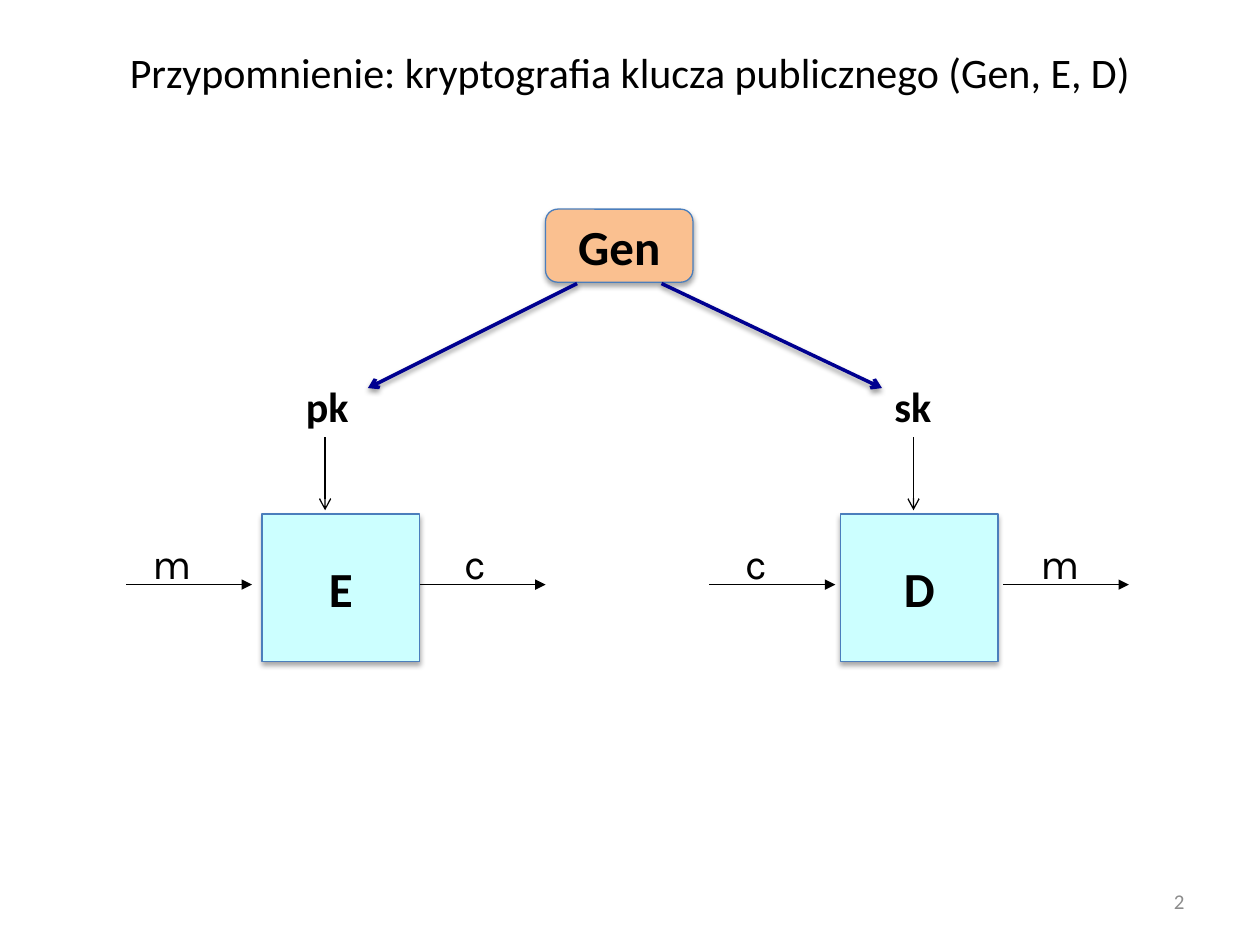
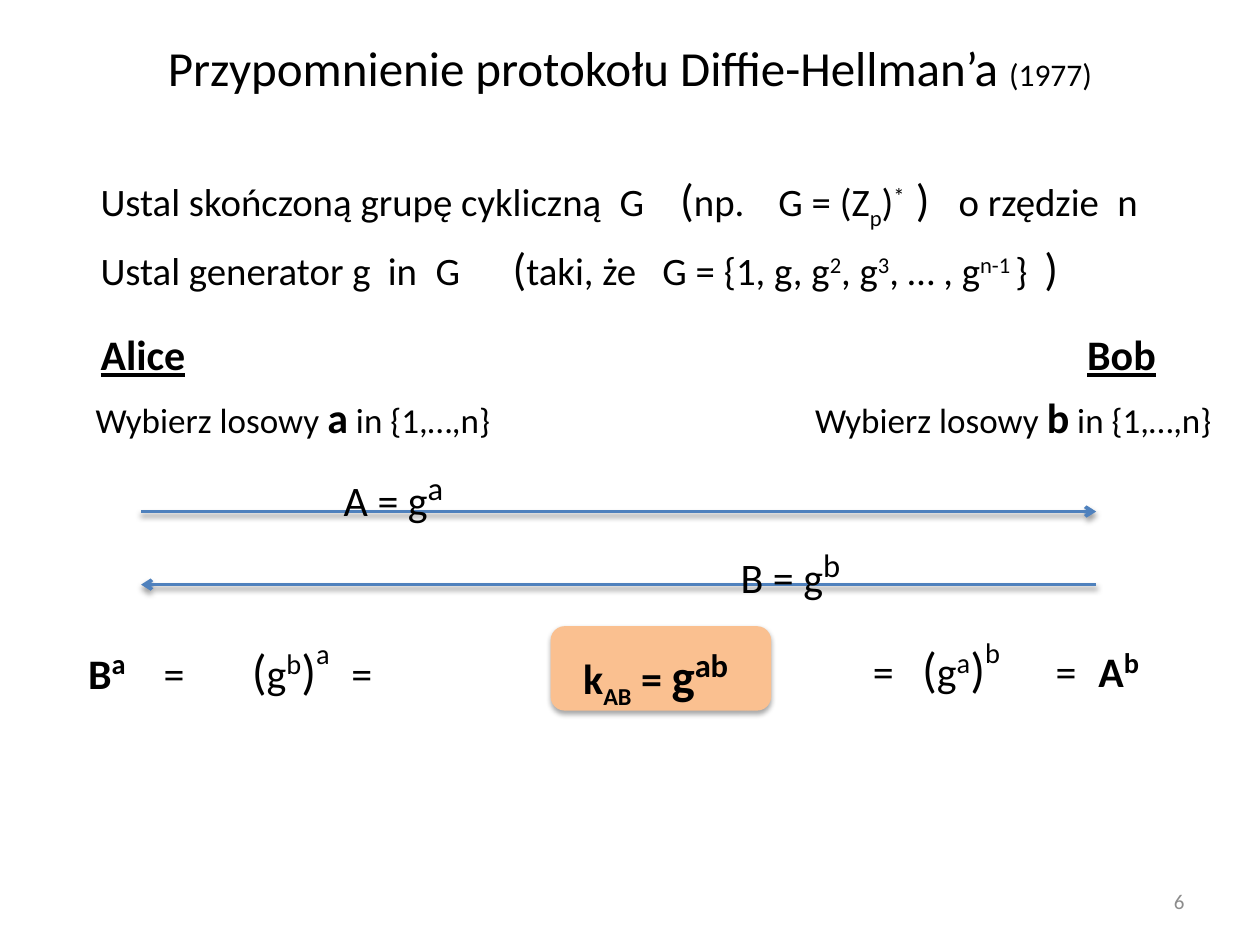
from dataclasses import dataclass
from typing import NamedTuple

from lxml import etree
from pptx import Presentation, util as u
from pptx.dml.color import RGBColor
from pptx.enum import shapes, text
from pptx.oxml.ns import qn

# Shared look
BLACK, GRAY, CYAN, ORANGE = "000000", "8C8C8C", "CCFFFF", "FAC090"
OUTLINE, NAVY, BLUE = "4B7EBC", "000090", "4F81BD"
FONT, LETTER_FONT = "Calibri", "Karla"
LEFT, CENTER, RIGHT = text.PP_ALIGN.LEFT, text.PP_ALIGN.CENTER, text.PP_ALIGN.RIGHT
TOP, MIDDLE = text.MSO_ANCHOR.TOP, text.MSO_ANCHOR.MIDDLE
RECT, ROUNDED = shapes.MSO_SHAPE.RECTANGLE, shapes.MSO_SHAPE.ROUNDED_RECTANGLE


class Run(NamedTuple):
    text: str
    size: float = 24
    bold: bool = False
    base: int = 0
    underline: bool = False
    font: str = FONT
    color: str = BLACK


class Frame(NamedTuple):
    left: float
    top: float
    width: float
    height: float

    def inches(self) -> list:
        return [u.Inches(v) for v in self]


@dataclass
class Arrow:
    start: tuple
    end: tuple
    color: str = BLACK
    width: float = 0.75
    head: str = "arrow"
    shadow: bool = False


@dataclass
class Block:
    frame: Frame
    runs: list
    fill: str = CYAN
    kind: int = RECT
    line: str = OUTLINE


def rgb(color: str) -> RGBColor:
    return RGBColor.from_string(color)


def set_effects(sp, shadow: bool, alpha: int = 35) -> None:
    effects = etree.SubElement(sp._element.spPr, qn("a:effectLst"))
    if shadow:
        outer = etree.SubElement(effects, qn("a:outerShdw"), blurRad=str(u.Pt(3.1)),
                                 dist=str(u.Pt(1.8)), dir="5400000", rotWithShape="0")
        tint = etree.SubElement(outer, qn("a:srgbClr"), val=BLACK)
        etree.SubElement(tint, qn("a:alpha"), val=str(alpha * 1000))


def add_runs(p, runs: list) -> None:
    for run in runs:
        r = p.add_run()
        r.text = run.text
        r.font.name, r.font.size = run.font, u.Pt(run.size)
        r.font.bold, r.font.underline = run.bold, run.underline
        r.font.color.rgb = rgb(run.color)
        if run.base:
            r._r.get_or_add_rPr().set("baseline", str(run.base * 1000))


def add_tabs(p, stops: list) -> None:
    tabs = etree.SubElement(p._p.get_or_add_pPr(), qn("a:tabLst"))
    for stop in stops:
        etree.SubElement(tabs, qn("a:tab"), pos=str(u.Inches(stop)), algn="l")


def add_text(s, frame: Frame, *lines: list, align=LEFT, anchor=TOP,
             before: float = 0, tabs: tuple = ()) -> None:
    tf = s.shapes.add_textbox(*frame.inches()).text_frame
    tf.word_wrap, tf.vertical_anchor = True, anchor
    for i, runs in enumerate(lines):
        p = tf.add_paragraph() if i else tf.paragraphs[0]
        p.alignment, p.space_before = align, u.Pt(before)
        if tabs:
            add_tabs(p, tabs[i])
        add_runs(p, runs)


def add_block(s, block: Block) -> None:
    sp = s.shapes.add_shape(block.kind, *block.frame.inches())
    sp.fill.solid()
    sp.fill.fore_color.rgb = rgb(block.fill)
    if block.line:
        sp.line.color.rgb, sp.line.width = rgb(block.line), u.Pt(0.75)
    else:
        sp.line.fill.background()
    set_effects(sp, True)
    tf = sp.text_frame
    tf.vertical_anchor = MIDDLE
    tf.paragraphs[0].alignment = CENTER
    add_runs(tf.paragraphs[0], block.runs)


def add_arrow(s, arrow: Arrow) -> None:
    ends = [u.Inches(v) for v in (*arrow.start, *arrow.end)]
    sp = s.shapes.add_connector(shapes.MSO_CONNECTOR.STRAIGHT, *ends)
    sp.line.color.rgb, sp.line.width = rgb(arrow.color), u.Pt(arrow.width)
    etree.SubElement(sp.line._get_or_add_ln(), qn("a:tailEnd"), type=arrow.head)
    set_effects(sp, arrow.shadow, 38)


def add_slide(prs, title: list, title_height: float, number: int):
    s = prs.slides.add_slide(prs.slide_layouts[6])
    add_text(s, Frame(0.5, 0.3, 9, title_height), title, align=CENTER, anchor=MIDDLE)
    add_text(s, Frame(7.17, 6.95, 2.33, 0.4), [Run(str(number), 12, color=GRAY)],
             align=RIGHT, anchor=MIDDLE)
    return s


def build_public_key(prs) -> None:
    s = add_slide(prs, [Run("Przypomnienie: kryptografia klucza publicznego (Gen, E, D)")],
                  0.54, 2)
    # Encryption and decryption boxes with their keys
    for name, left, key, key_left, key_x in (("E", 2.08, "pk", 2.33, 2.58),
                                             ("D", 6.67, "sk", 7, 7.25)):
        add_block(s, Block(Frame(left, 4.08, 1.25, 1.17), [Run(name, 28, True)]))
        add_arrow(s, Arrow((key_x, 3.47), (key_x, 4.05)))
        add_text(s, Frame(key_left, 2.97, 0.6, 0.5), [Run(key, bold=True)])
    # Messages and ciphertexts
    for letter, x, left, width in (("m", 1, 1.11, 0.5), ("c", 3.33, 3.59, 0.36),
                                   ("c", 5.63, 5.82, 0.36), ("m", 7.96, 8.16, 0.5)):
        add_arrow(s, Arrow((x, 4.64), (x + 1, 4.64), head="triangle"))
        add_text(s, Frame(left, 4.22, width, 0.5), [Run(letter, font=LETTER_FONT)],
                 align=CENTER)
    # Key generator
    add_block(s, Block(Frame(4.33, 1.66, 1.17, 0.58), [Run("Gen", 28, True)],
                       ORANGE, ROUNDED))
    for x, key_x in ((4.58, 2.92), (5.25, 7)):
        add_arrow(s, Arrow((x, 2.25), (key_x, 3.08), NAVY, 2, shadow=True))


def build_diffie_hellman(prs) -> None:
    s = add_slide(prs, [Run("Przypomnienie protokołu Diffie-Hellman’a ", 28),
                        Run("(1977)", 18)], 0.46, 6)
    # Group and generator
    body, paren = 22.2, 25.9
    group = [Run("Ustal skończoną grupę cykliczną\tG\t", body), Run("(", paren),
             Run("np.\tG = (Z", body), Run("p", body, base=-25), Run(")", body),
             Run("*", body, base=30), Run("\t)\t", paren), Run("o rzędzie\tn", body)]
    generator = [Run("Ustal generator g\tin\tG\t", body), Run("(", paren),
                 Run("taki, że\tG = {1, g, g", body), Run("2", body, base=30),
                 Run(", g", body), Run("3", body, base=30), Run(", … , g", body),
                 Run("n-1 ", body, base=30), Run("}\t", body), Run(")", paren)]
    add_text(s, Frame(0.7, 1.31, 9, 1.25), group, generator, before=5.2,
             tabs=([4.12, 4.6, 5.38, 6.47, 6.81, 8.07], [2.28, 2.66, 3.27, 4.46, 7.49]))

    # Both parties and their secrets
    for name, left, secret, secret_left in (("Alice", 0.7, "a", 0.66),
                                            ("Bob", 8.53, "b", 6.37)):
        add_text(s, Frame(left, 2.56, 0.95, 0.5), [Run(name, bold=True, underline=True)])
        add_text(s, Frame(secret_left, 3.06, 3.55, 0.5),
                 [Run("Wybierz losowy ", 20), Run(secret, bold=True),
                  Run(" in {1,…,n}", 20)])

    # Exchanged values
    for value, power, left, top, start, end, y in (
            ("A", "a", 2.63, 3.61, 1.12, 8.7, 4.06),
            ("B", "b", 5.78, 4.22, 8.7, 1.12, 4.64)):
        add_arrow(s, Arrow((start, y), (end, y), BLUE, 2, shadow=True))
        add_text(s, Frame(left, top, 1.1, 0.5),
                 [Run(f"{value} = g"), Run(power, 32, base=30)])

    # Shared key
    add_block(s, Block(Frame(4.37, 4.97, 1.75, 0.67), [], ORANGE, ROUNDED, ""))
    add_text(s, Frame(4.53, 5.02, 1.5, 0.57),
             [Run("k", bold=True), Run("AB", bold=True, base=-25), Run(" = ", bold=True),
              Run("g", 28, True), Run("ab", 32, True, 30)])

    # Each side's way to the key
    def power_of_power(inner: str, outer: str) -> list:
        return [Run("(", 28), Run("g"), Run(inner, 28, base=30), Run(")", 28),
                Run(outer, 28, base=50)]

    add_text(s, Frame(0.6, 5, 2.55, 0.57),
             [Run("B", bold=True), Run("a", 28, True, 30), Run("\t=\t"),
              *power_of_power("b", "a"), Run("\t=")], tabs=([0.6, 1.3, 2.09],))
    add_text(s, Frame(6.83, 4.99, 2.5, 0.57),
             [Run("=\t"), *power_of_power("a", "b"), Run("\t=\t"),
              Run("A", bold=True), Run("b", 28, True, 30)], tabs=([0.39, 1.45, 1.79],))


def main() -> None:
    prs = Presentation()
    prs.slide_width, prs.slide_height = u.Inches(10), u.Inches(7.5)
    build_public_key(prs)
    build_diffie_hellman(prs)
    prs.save("out.pptx")


if __name__ == "__main__":
    main()
